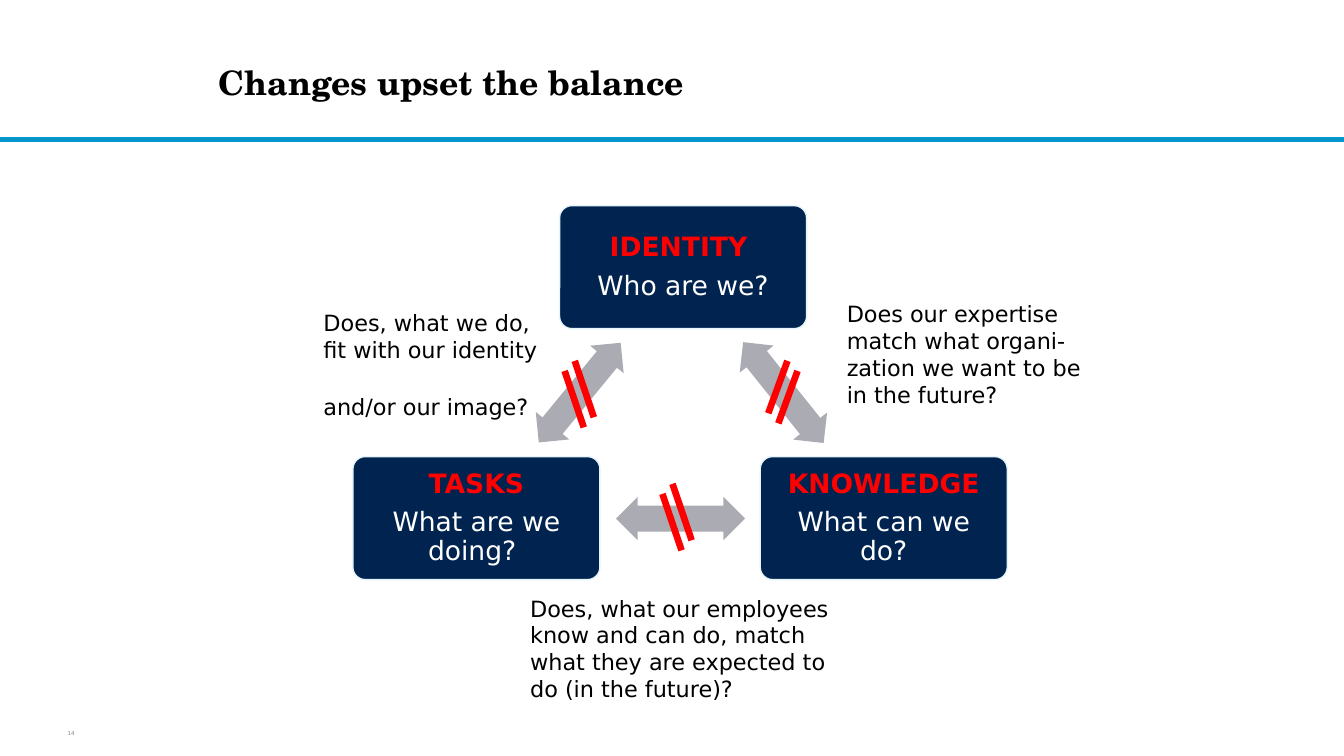
import pptx
import pptx.dml.color
import pptx.enum.shapes
import pptx.enum.text
import pptx.oxml
import pptx.util
from pptx.util import Inches

COLORS = {
    "rule": "0C94B7", "edge": "0096D3", "navy": "002350", "rim": "E5F5FA",
    "gray": "ABACB3", "red": "FF0000", "white": "FFFFFF", "black": "000000",
    "dim": "8C8C8C",
}
SANS, SERIF = "DejaVu Sans", "TeX Gyre Schola"
KIND = pptx.enum.shapes.MSO_SHAPE
ALIGN = pptx.enum.text.PP_ALIGN
ANCHOR = pptx.enum.text.MSO_ANCHOR


def color(name):
    return pptx.dml.color.RGBColor.from_string(COLORS[name])


def write(para, text, size=16, font=SANS, tone="black", bold=False,
          align=ALIGN.LEFT, line=None, after=None):
    para.text = text
    para.alignment = align
    if line is not None:
        para.line_spacing = line
    if after is not None:
        para.space_after = pptx.util.Pt(after)
    for run in para.runs:
        run.font.size = pptx.util.Pt(size)
        run.font.name = font
        run.font.bold = bold
        run.font.color.rgb = color(tone)


def frame(shape, inset, anchor):
    body = shape.text_frame
    body.word_wrap = True
    body.vertical_anchor = anchor
    body.margin_left = body.margin_right = Inches(inset[0])
    body.margin_top = body.margin_bottom = Inches(inset[1])
    return body


def label(slide, at, text, inset=(0.1, 0.05), anchor=ANCHOR.TOP, **style):
    box = slide.shapes.add_textbox(*map(Inches, at))
    write(frame(box, inset, anchor).paragraphs[0], text, **style)


def solid(slide, kind, at, fill, edge=None):
    shape = slide.shapes.add_shape(kind, *map(Inches, at))
    shape.shadow.inherit = False
    shape.fill.solid()
    shape.fill.fore_color.rgb = color(fill)
    if edge:
        shape.line.color.rgb = color(edge)
        shape.line.width = pptx.util.Pt(1)
    else:
        shape.line.fill.background()
    return shape


def card(slide, left, top, head, ask):
    shape = solid(slide, KIND.ROUNDED_RECTANGLE, (left, top, 2.45, 1.22),
                  "navy", "rim")
    shape.adjustments[0] = 0.1
    body = frame(shape, (0.11, 0.11), ANCHOR.MIDDLE)
    style = dict(size=19, align=ALIGN.CENTER, line=0.9, after=7)
    write(body.paragraphs[0], head, tone="red", bold=True, **style)
    write(body.add_paragraph(), ask, tone="white", **style)


def arrow(slide, left, top, turn):
    shape = solid(slide, KIND.LEFT_RIGHT_ARROW, (left, top, 1.28, 0.43), "gray")
    shape.adjustments[0] = 0.6
    shape.adjustments[1] = 0.5
    shape.rotation = turn


def slash(slide, left, top, run, drop):
    """Draw two parallel strokes; the second is offset down and sideways."""
    step = -0.1 if run > 0 else 0.1
    for x, y in ((left, top), (left + step, top + 0.1)):
        ends = (x, y, x + run, y + drop)
        line = slide.shapes.add_connector(
            pptx.enum.shapes.MSO_CONNECTOR.STRAIGHT, *map(Inches, ends))
        line.line.color.rgb = color("red")
        line.line.width = pptx.util.Pt(4.75)
        line._element.spPr.append(
            pptx.oxml.parse_xml(
                '<a:effectLst xmlns:a="http://schemas.openxmlformats.org/'
                'drawingml/2006/main"/>'))


def main():
    deck = pptx.Presentation()
    deck.slide_width, deck.slide_height = Inches(13.33), Inches(7.5)
    slide = deck.slides.add_slide(deck.slide_layouts[6])

    # Header and page number
    solid(slide, KIND.RECTANGLE, (0, 1.37, 13.33, 0.03), "rule", "edge")
    label(slide, (2.17, 0.25, 7.69, 1.12), "Changes upset the balance",
          inset=(0, 0), anchor=ANCHOR.MIDDLE, size=24, font=SERIF, bold=True)
    label(slide, (0.67, 7.1, 1.3, 0.34), "14", inset=(0, 0.05),
          anchor=ANCHOR.MIDDLE, size=4, tone="dim")

    # Questions around the triangle
    label(slide, (8.3, 2.93, 2.58, 1.18),
          "Does our expertise match what organi-zation we want to be "
          "in the future?")
    label(slide, (5.16, 5.85, 3.16, 1.45),
          "Does, what our employees know and can do, match what they are "
          "expected to do (in the future)?")
    label(slide, (3.11, 3.02, 2.37, 0.91),
          "Does, what we do, \vfit with our identity \vand/or our image?")

    # Triangle corners
    card(slide, 5.55, 2.04, "IDENTITY ", "Who are we?")
    card(slide, 7.54, 4.53, "KNOWLEDGE", "What can we do?")
    card(slide, 3.5, 4.53, "TASKS", "What are we doing? ")

    # Triangle sides
    arrow(slide, 7.13, 3.68, 51.4)
    arrow(slide, 6.11, 4.93, 0)
    arrow(slide, 5.11, 3.68, 309.4)

    # Breaks across the sides
    slash(slide, 5.7, 3.58, 0.19, 0.56)
    slash(slide, 6.67, 4.8, 0.19, 0.56)
    slash(slide, 7.81, 3.58, -0.19, 0.52)

    deck.save("out.pptx")


if __name__ == "__main__":
    main()
